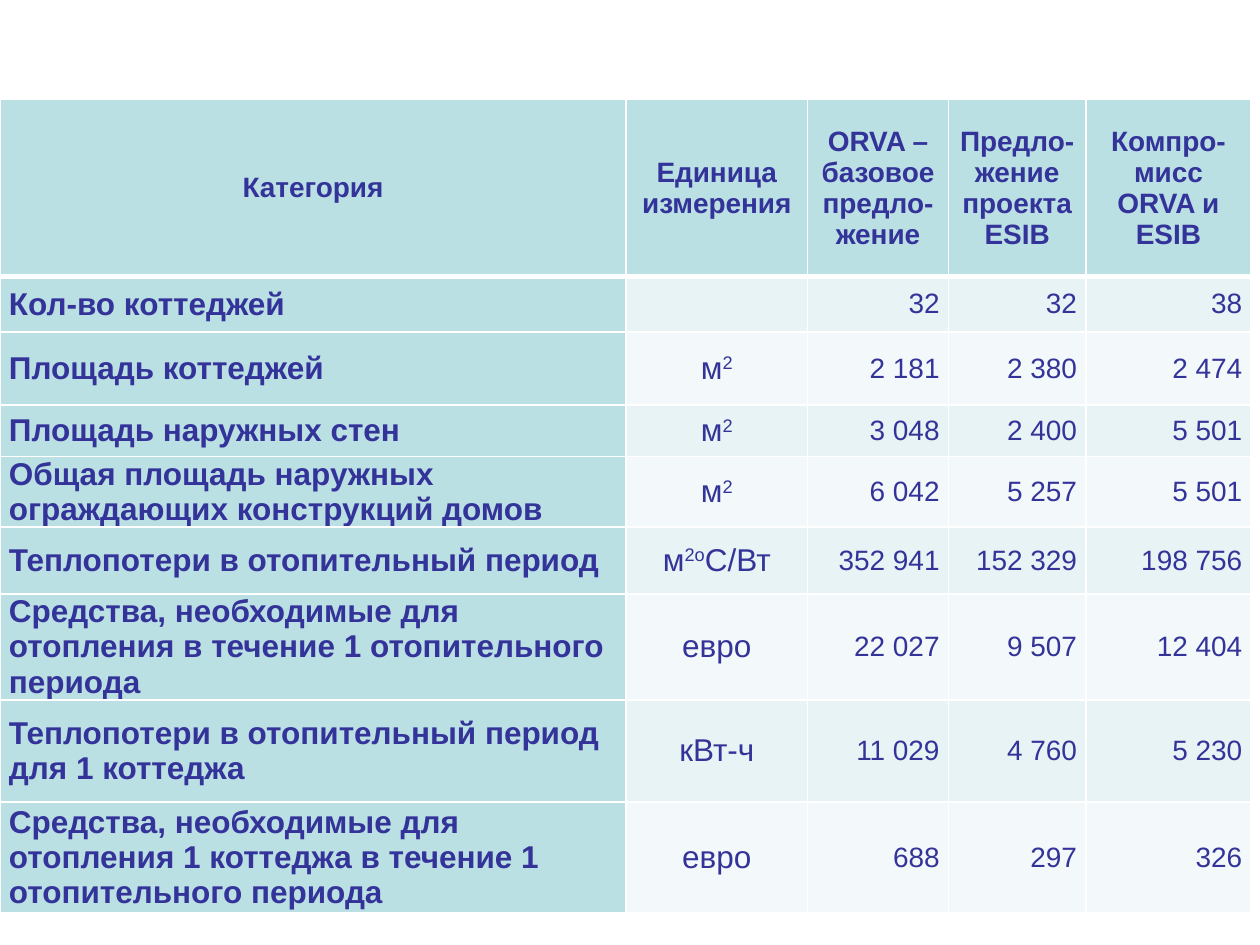
import pptx
import pptx.util
import pptx.dml.color
import pptx.enum.text
import pptx.oxml
import pptx.oxml.ns
from pptx.util import Cm


def colour(value):
    return pptx.dml.color.RGBColor.from_string(value)


def add_border(cell, side, points):
    width = int(pptx.util.Pt(points))
    cell._tc.get_or_add_tcPr().append(pptx.oxml.parse_xml(
        f'<a:{side} {pptx.oxml.ns.nsdecls("a")} w="{width}"><a:solidFill>'
        f'<a:srgbClr val="FFFFFF"/></a:solidFill></a:{side}>'))


LEFT, CENTER, RIGHT = (pptx.enum.text.PP_ALIGN.LEFT,
                       pptx.enum.text.PP_ALIGN.CENTER,
                       pptx.enum.text.PP_ALIGN.RIGHT)
square_metres = [("м", False), ("2", True)]
heat_unit = [("м", False), ("2o", True), ("C/Вт", False)]

rows = [
    ["Категория", "Единица измерения", "ORVA –базовое предло-жение",
     "Предло-жение проекта ESIB", "Компро-мисс ORVA и ESIB"],
    ["Кол-во коттеджей", "", "32", "32", "38"],
    ["Площадь коттеджей", square_metres, "2 181", "2 380", "2 474"],
    ["Площадь наружных стен", square_metres, "3 048", "2 400", "5 501"],
    ["Общая площадь наружных ограждающих конструкций домов",
     square_metres, "6 042", "5 257", "5 501"],
    ["Теплопотери в отопительный период", heat_unit,
     "352 941", "152 329", "198 756"],
    ["Средства, необходимые для отопления в течение 1 отопительного периода",
     "евро", "22 027", "9 507", "12 404"],
    ["Теплопотери в отопительный период для 1 коттеджа", "кВт-ч",
     "11 029", "4 760", "5 230"],
    ["Средства, необходимые для отопления 1 коттеджа в течение 1 "
     "отопительного периода", "евро", "688", "297", "326"],
]
column_widths = [12.62, 3.66, 2.84, 2.77, 3.33]
row_heights = [3.56, 1.12, 1.47, 1.04, 1.35, 1.35, 2.06, 2.06, 2.24]

deck = pptx.Presentation()
deck.slide_width = Cm(25.4)
deck.slide_height = Cm(19.05)
page = deck.slides.add_slide(deck.slide_layouts[6])

table = page.shapes.add_table(
    len(rows), len(column_widths), Cm(0), Cm(2.01),
    Cm(sum(column_widths)), Cm(sum(row_heights))).table
for column, width in zip(table.columns, column_widths):
    column.width = Cm(width)
for row, height in zip(table.rows, row_heights):
    row.height = Cm(height)

for row_index, row in enumerate(rows):
    for column_index, content in enumerate(row):
        cell = table.cell(row_index, column_index)
        is_header = row_index == 0
        is_category = column_index == 0
        for side in ("lnL", "lnR", "lnT", "lnB"):
            thick = (row_index, side) in ((0, "lnB"), (1, "lnT"))
            add_border(cell, side, 3 if thick else 1)
        if is_header or is_category:
            fill = "BBE0E3"
        else:
            fill = "E7F3F4" if row_index % 2 else "F3F9FA"
        cell.fill.solid()
        cell.fill.fore_color.rgb = colour(fill)
        cell.margin_left = cell.margin_right = Cm(0.18)
        cell.margin_top = cell.margin_bottom = Cm(0)
        cell.vertical_anchor = pptx.enum.text.MSO_ANCHOR.MIDDLE

        para = cell.text_frame.paragraphs[0]
        if is_header or column_index == 1:
            para.alignment = CENTER
        else:
            para.alignment = LEFT if is_category else RIGHT
        spans = [(content, False)] if isinstance(content, str) else content
        for text, raised in spans:
            if not text:
                continue
            span = para.add_run()
            span.text = text
            span.font.name = "Arial"
            span.font.size = pptx.util.Pt(
                16 if is_header or column_index > 1 else 18)
            span.font.bold = is_header or is_category
            span.font.color.rgb = colour("333399")
            if raised:
                span._r.get_or_add_rPr().set("baseline", "30000")

deck.save("out.pptx")
